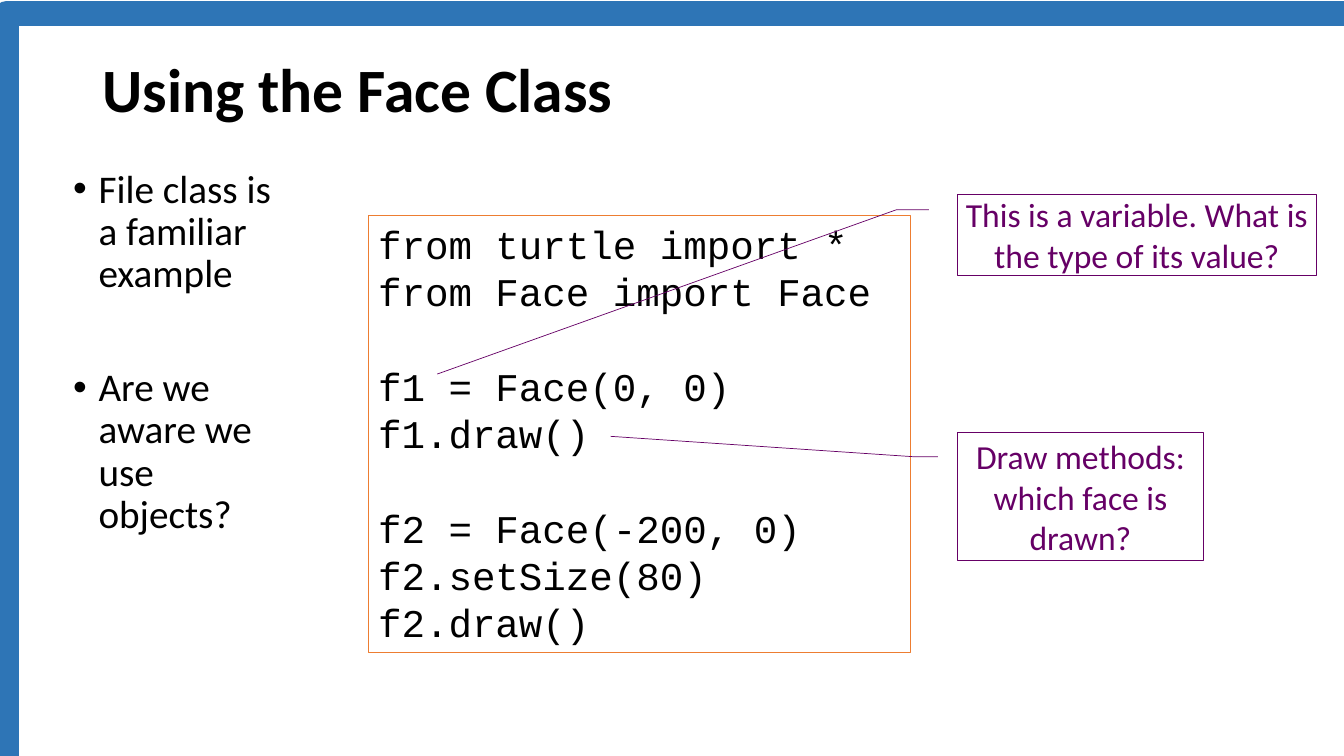
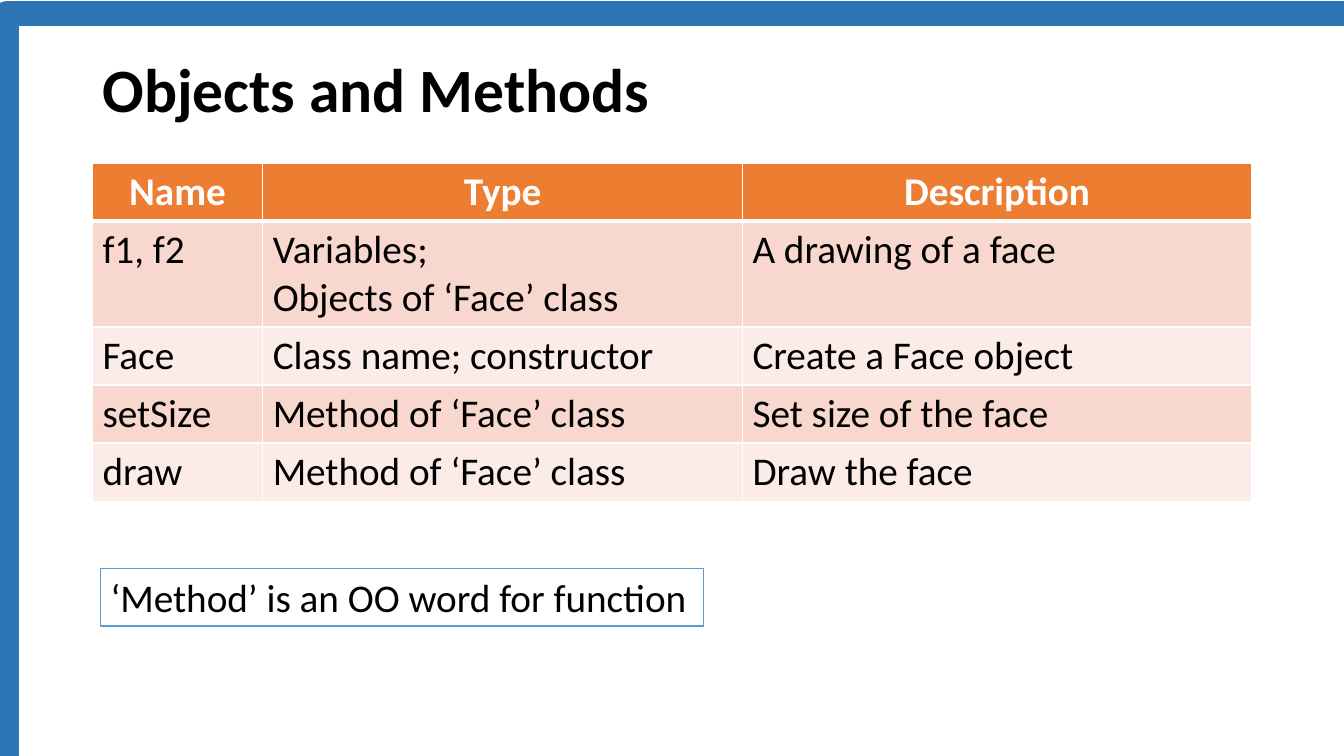
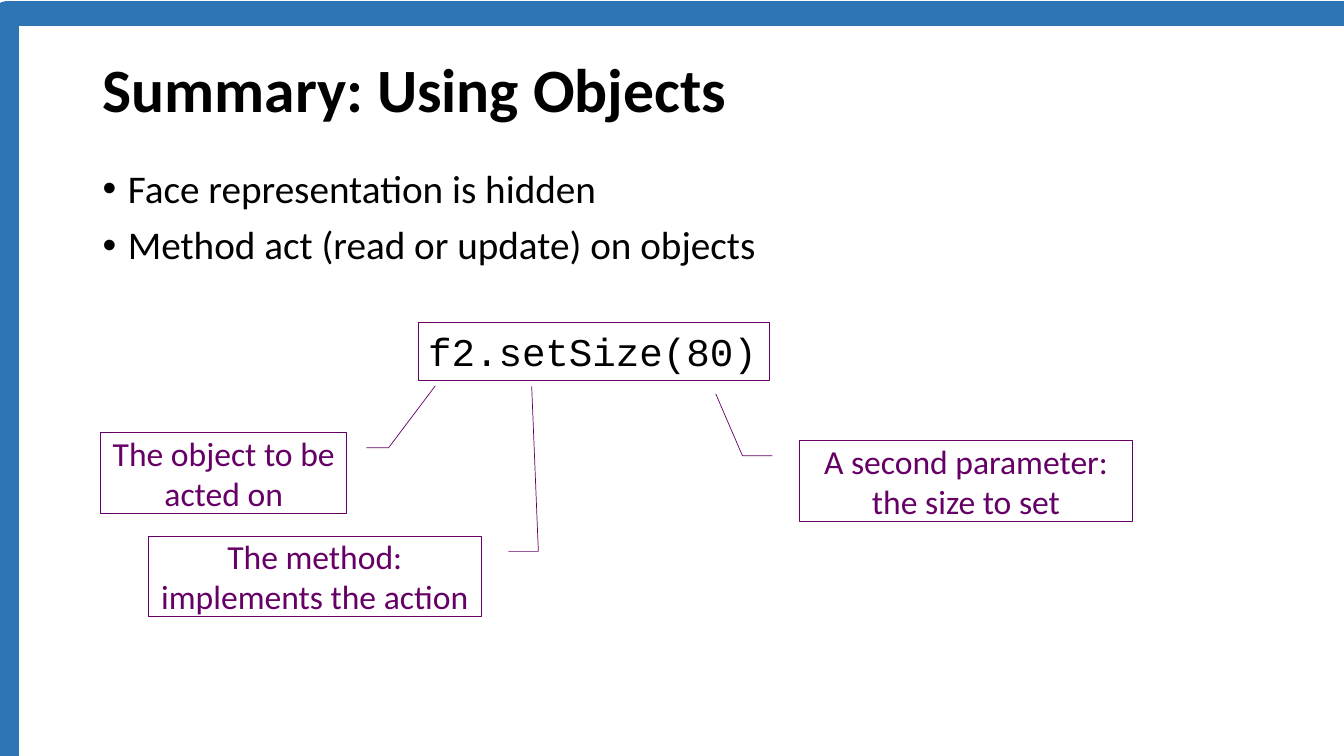
from dataclasses import dataclass

from lxml import etree
from pptx import Presentation
from pptx.dml.color import RGBColor
from pptx.enum.shapes import MSO_SHAPE
from pptx.enum.text import MSO_ANCHOR, MSO_AUTO_SIZE, PP_ALIGN
from pptx.oxml.ns import qn
from pptx.util import Cm, Pt

RECT, CALLOUT = MSO_SHAPE.RECTANGLE, MSO_SHAPE.LINE_CALLOUT_2
TOP, MIDDLE = MSO_ANCHOR.TOP, MSO_ANCHOR.MIDDLE
LEFT, CENTER = PP_ALIGN.LEFT, PP_ALIGN.CENTER
FIXED, GROW = MSO_AUTO_SIZE.NONE, MSO_AUTO_SIZE.SHAPE_TO_FIT_TEXT
LISTED, PLAIN = 1, 5  # layouts with and without a body


@dataclass(frozen=True)
class Theme:
    ink: str = "000000"
    paper: str = "FFFFFF"
    band: str = "2E75B6"
    accent: str = "ED7D31"
    note: str = "5B9BD5"
    call: str = "660066"
    dark: str = "F8D7CE"
    light: str = "FCECE8"
    sans: str = "Calibri"
    mono: str = "Courier New"
    head: int = 44
    text: int = 28
    small: int = 24


T = Theme()
TITLE = (2.33, 1.01, 29.21, 2.63)


def rgb(code):
    return RGBColor.from_string(code)


def lengths(box):
    return [Cm(value) for value in box]


def move(shape, box):
    shape.left, shape.top, shape.width, shape.height = lengths(box)


def bullet(para):
    props = para._p.get_or_add_pPr()
    props.set("marL", str(Cm(0.64)))
    props.set("indent", str(-Cm(0.64)))
    etree.SubElement(props, qn("a:buFont")).set("typeface", "Arial")
    etree.SubElement(props, qn("a:buChar")).set("char", "•")


def put(frame, lines, size=T.text, font=T.sans, color=T.ink, bold=False,
        align=LEFT, anchor=TOP, fit=FIXED, wrap=True, dots=False,
        lead=None, gaps=None):
    """Write one paragraph per line; gaps maps a line's index to its space before."""
    frame.auto_size, frame.word_wrap = fit, wrap
    frame.vertical_anchor = anchor
    for index, line in enumerate(lines):
        para = frame.add_paragraph() if index else frame.paragraphs[0]
        if dots:
            bullet(para)
        para.alignment = align
        para.space_before = Pt((gaps or {}).get(index, 0))
        if lead:
            para.line_spacing = lead
        run = para.add_run()
        run.text = line
        run.font.size, run.font.name, run.font.bold = Pt(size), font, bold
        run.font.color.rgb = rgb(color)


def draw(slide, box, line, width, fill=None, kind=RECT):
    shape = slide.shapes.add_shape(kind, *lengths(box))
    shape.shadow.inherit = False
    if fill:
        shape.fill.solid()
        shape.fill.fore_color.rgb = rgb(fill)
    else:
        shape.fill.background()
    shape.line.color.rgb, shape.line.width = rgb(line), Pt(width)
    return shape


def callout(slide, box, text, tip, flip=False):
    """Boxed remark whose leader ends at tip, given as (down, across) shares of the box."""
    shape = draw(slide, box, T.call, 0.5, kind=CALLOUT)
    for index, value in enumerate((0.19, -0.08, 0.19, -0.17, *tip)):
        shape.adjustments[index] = value
    if flip:
        shape.element.spPr.xfrm.set("flipH", "1")
    frame = shape.text_frame
    frame.margin_left = frame.margin_right = Cm(0.1)
    put(frame, [text], size=T.small, color=T.call, align=CENTER, anchor=MIDDLE)


def listing(slide, box, lines, line, width, **form):
    shape = draw(slide, box, line, width, form.pop("fill", None))
    put(shape.text_frame, lines, fit=GROW, **form)


def bullets(slide, box, lines, gap):
    body = slide.placeholders[1]
    move(body, box)
    put(body.text_frame, lines, dots=True, lead=0.9, gaps={1: gap})


def border(cell, side, width):
    line = etree.SubElement(cell._tc.get_or_add_tcPr(), qn("a:ln" + side))
    line.set("w", str(Pt(width)))
    fill = etree.SubElement(line, qn("a:solidFill"))
    etree.SubElement(fill, qn("a:srgbClr")).set("val", T.paper)


def grid(slide, box, rows, widths, heights):
    table = slide.shapes.add_table(len(rows), len(widths), *lengths(box)).table
    table.horz_banding = False
    for col, width in zip(table.columns, widths):
        col.width = Cm(width)
    for at, (row, height) in enumerate(zip(rows, heights)):
        table.rows[at].height = Cm(height)
        top = at == 0
        shade = T.accent if top else (T.light, T.dark)[at % 2]
        for across, text in enumerate(row):
            cell = table.cell(at, across)
            put_cell(cell, text, top)
            for side in "LRTB":
                thick = (side == "B" and at == 0) or (side == "T" and at == 1)
                border(cell, side, 3 if thick else 1)
            cell.fill.solid()
            cell.fill.fore_color.rgb = rgb(shade)


def put_cell(cell, text, top):
    put(cell.text_frame, text.split("\n"), bold=top,
        color=T.paper if top else T.ink, align=CENTER if top else LEFT)
    cell.vertical_anchor = MIDDLE if top else TOP


def start(deck, layout, title):
    slide = deck.slides.add_slide(deck.slide_layouts[layout])
    put(slide.shapes.title.text_frame, [title], size=T.head, bold=True,
        anchor=MIDDLE, lead=0.9)
    return slide


def master(deck, slide):
    """Set the title's place and the frame that every slide shares."""
    base = deck.slide_master
    move(base.placeholders[0], TITLE)
    frame = draw(slide, (0.17, 0.34, 34.02, 19.18), T.band, 18)
    base.shapes.element.insert(2, frame.element)


def using(deck):
    slide = start(deck, LISTED, "Using the Face Class")
    master(deck, slide)
    code = ["from turtle import *", "from Face import Face",
            "f1 = Face(0, 0)", "f1.draw()",
            "f2 = Face(-200, 0)", "f2.setSize(80)", "f2.draw()"]
    listing(slide, (9.28, 5.43, 13.66, 11.02), code, T.accent, 1,
            fill=T.paper, font=T.mono, gaps={2: 34, 4: 34})
    bullets(slide, (1.59, 4.14, 5.95, 14.3),
            ["File class is a familiar example", "Are we aware we use objects?"], 51)
    callout(slide, (24.13, 4.9, 9.04, 2.03),
            "This is a variable. What is the type of its value?", (2.23, -1.45))
    callout(slide, (24.13, 10.9, 6.2, 3.23),
            "Draw methods: which face is drawn?", (0.03, -1.41))


def methods(deck):
    slide = start(deck, PLAIN, "Objects and Methods")
    rows = [("Name", "Type", "Description"),
            ("f1, f2", "Variables;\nObjects of ‘Face’ class", "A drawing of a face"),
            ("Face", "Class name; constructor", "Create a Face object"),
            ("setSize", "Method of ‘Face’ class", "Set size of the face"),
            ("draw", "Method of ‘Face’ class", "Draw the face")]
    grid(slide, (2.33, 4.11, 29.21, 8.38), rows, (4.29, 12.09, 12.83),
         (1.44, 2.62, 1.44, 1.44, 1.44))
    listing(slide, (2.54, 14.33, 15.19, 1.45),
            ["‘Method’ is an OO word for function"], T.note, 1,
            fill=T.paper, wrap=False)


def summary(deck):
    slide = start(deck, LISTED, "Summary: Using Objects")
    bullets(slide, (2.33, 4.14, 29.21, 6.2),
            ["Face representation is hidden",
             "Method act (read or update) on objects"], 10)
    listing(slide, (10.54, 8.13, 8.86, 1.45), ["f2.setSize(80)"], T.call, 0.75,
            font=T.mono, wrap=False)
    callout(slide, (2.54, 10.9, 6.2, 2.03),
            "The object to be acted on", (-0.58, -0.36), flip=True)
    callout(slide, (3.73, 13.51, 8.41, 2.03),
            "The method: implements the action", (-1.86, -0.15), flip=True)
    callout(slide, (20.14, 11.1, 8.41, 2.03),
            "A second parameter: the size to set", (-0.58, -0.25))


def main():
    deck = Presentation()
    deck.slide_width, deck.slide_height = Cm(33.87), Cm(19.05)
    using(deck)
    methods(deck)
    summary(deck)
    deck.save("out.pptx")


if __name__ == "__main__":
    main()
